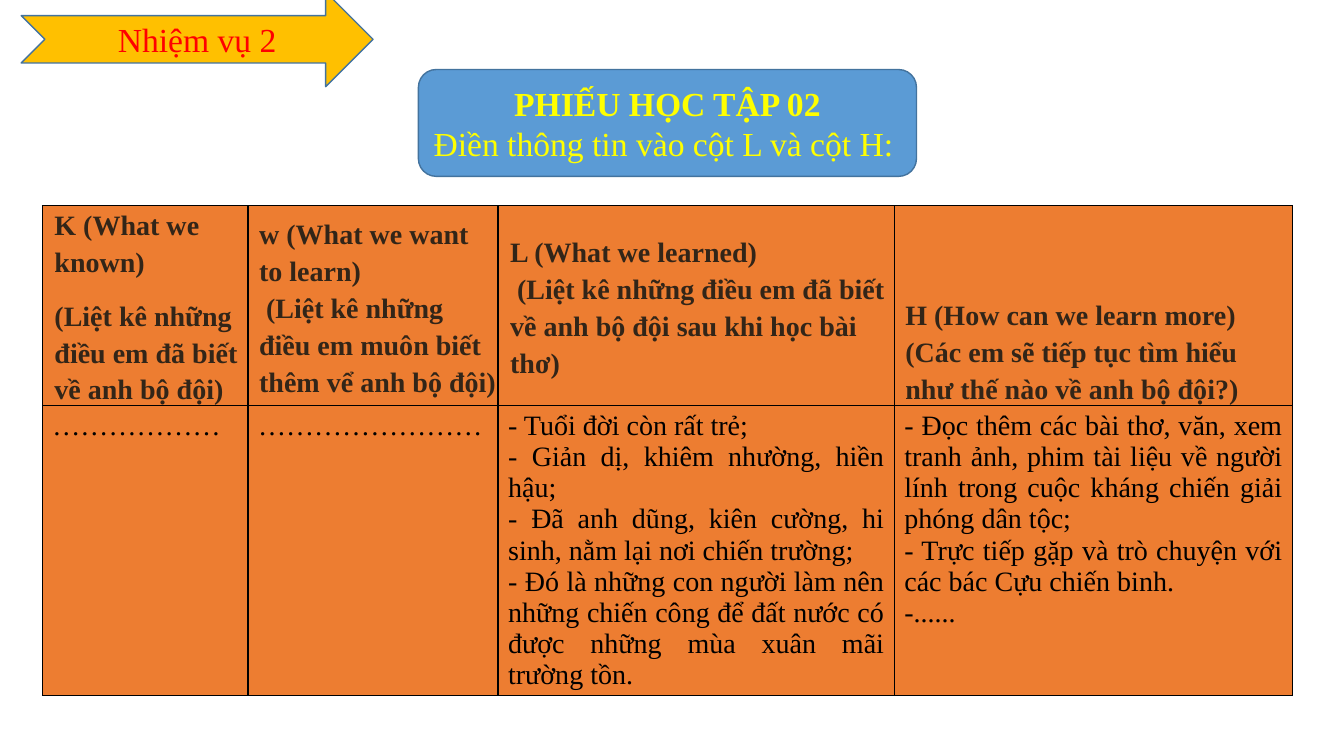
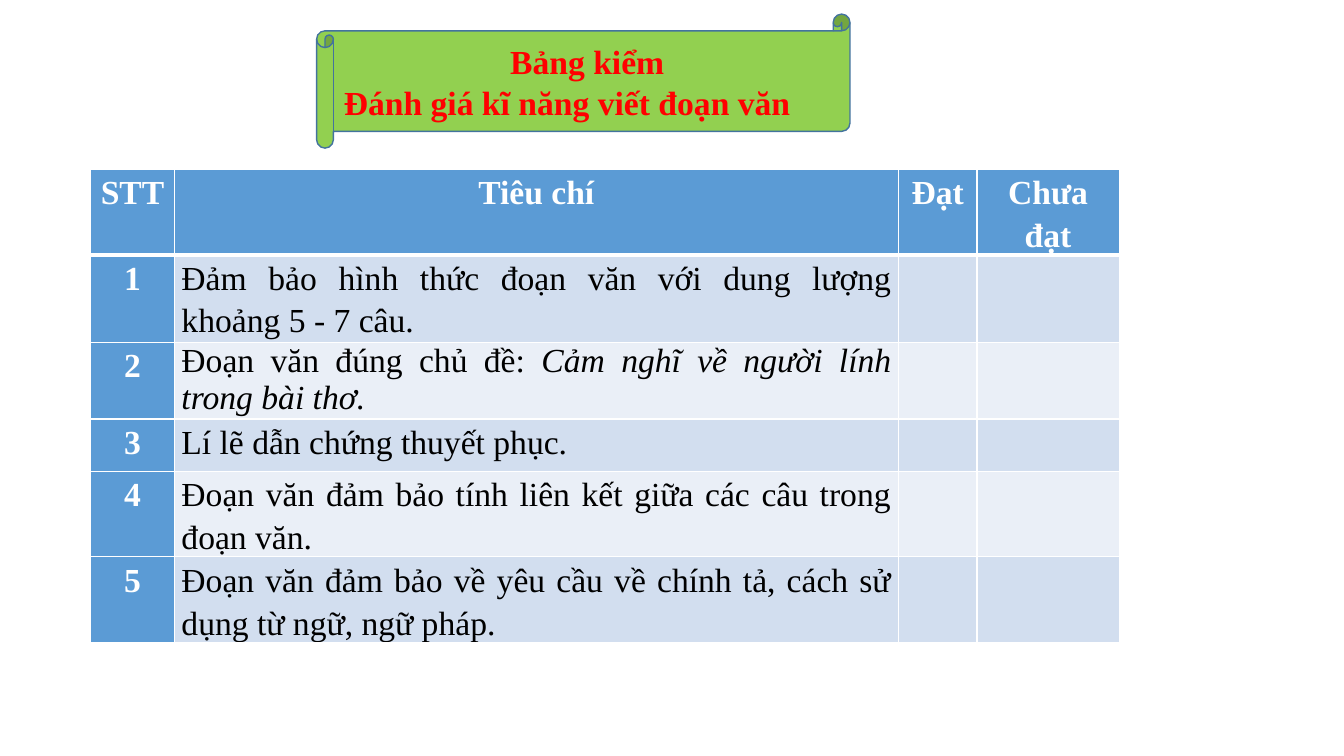
from dataclasses import dataclass, replace

from lxml.etree import SubElement
from pptx import Presentation
from pptx.dml.color import RGBColor
from pptx.enum.shapes import MSO_SHAPE
from pptx.enum.text import MSO_ANCHOR, MSO_AUTO_SIZE, PP_ALIGN
from pptx.oxml.ns import qn
from pptx.shapes.autoshape import Shape
from pptx.slide import Slide
from pptx.table import _Cell
from pptx.text.text import TextFrame
from pptx.util import Inches, Pt


@dataclass(frozen=True)
class Theme:
    font: str = "Times New Roman"
    large: int = 24
    body: int = 20
    black: str = "000000"
    white: str = "FFFFFF"
    red: str = "FF0000"
    yellow: str = "FFFF00"
    gold: str = "FFC000"
    green: str = "92D050"
    blue: str = "5B9BD5"
    edge: str = "43739E"
    orange: str = "ED7D31"
    brown: str = "322518"
    bands: tuple[str, str] = ("D2DEEF", "EAEFF7")


THEME = Theme()


@dataclass(frozen=True)
class Style:
    size: int
    color: str
    bold: bool = False
    align: PP_ALIGN = PP_ALIGN.LEFT
    line: float = 1.0
    before: int = 0
    after: int = 0


@dataclass(frozen=True)
class Para:
    text: str
    style: Style
    tail: str = ""  # closing words in italics


@dataclass(frozen=True)
class Box:
    left: float
    top: float
    width: float
    height: float


@dataclass(frozen=True)
class Cell:
    paras: tuple[Para, ...]
    fill: str
    inset: tuple[float, float, float, float] = (0.1, 0.05, 0.1, 0.05)
    anchor: MSO_ANCHOR = MSO_ANCHOR.TOP


@dataclass(frozen=True)
class Grid:
    left: float
    top: float
    cols: tuple[float, ...]
    rows: tuple[float, ...]
    cells: list[list[Cell]]
    border: str
    rule: int = 1  # width of the line below the head row


def write(frame: TextFrame, paras: tuple[Para, ...]) -> None:
    for index, para in enumerate(paras):
        line = frame.add_paragraph() if index else frame.paragraphs[0]
        style = para.style
        line.alignment = style.align
        line.line_spacing = style.line
        line.space_before = Pt(style.before)
        line.space_after = Pt(style.after)
        font = line.font
        font.name, font.size, font.bold = THEME.font, Pt(style.size), style.bold
        font.color.rgb = RGBColor.from_string(style.color)
        line.add_run().text = para.text
        if para.tail:
            run = line.add_run()
            run.text = para.tail
            run.font.italic = True


def draw(slide: Slide, kind: MSO_SHAPE, box: Box, fill: str) -> Shape:
    shape = slide.shapes.add_shape(
        kind, Inches(box.left), Inches(box.top), Inches(box.width), Inches(box.height)
    )
    shape.shadow.inherit = False
    shape.fill.solid()
    shape.fill.fore_color.rgb = RGBColor.from_string(fill)
    shape.line.color.rgb = RGBColor.from_string(THEME.edge)
    shape.line.width = Pt(1)
    return shape


def head(slide: Slide, kind: MSO_SHAPE, box: Box, fill: str, text: Box,
         paras: tuple[Para, ...]) -> None:
    """Draw a banner and set the slide title on top of it."""
    draw(slide, kind, box, fill)
    title = slide.shapes.title
    title.left, title.top = Inches(text.left), Inches(text.top)
    title.width, title.height = Inches(text.width), Inches(text.height)
    frame = title.text_frame
    frame.word_wrap = True
    frame.auto_size = MSO_AUTO_SIZE.NONE
    frame.vertical_anchor = MSO_ANCHOR.MIDDLE
    write(frame, paras)
    slide.shapes.element.append(title.element)


def frame_cell(cell: _Cell, color: str, top: int, bottom: int) -> None:
    """Put borders, given in points, around a filled cell."""
    props = cell._tc.get_or_add_tcPr()
    widths = {"a:lnL": 1, "a:lnR": 1, "a:lnT": top, "a:lnB": bottom}
    for index, (tag, width) in enumerate(widths.items()):
        line = SubElement(props, qn(tag), w=str(Pt(width)))
        SubElement(SubElement(line, qn("a:solidFill")), qn("a:srgbClr"), val=color)
        props.insert(index, line)


def draw_grid(slide: Slide, grid: Grid) -> None:
    table = slide.shapes.add_table(
        len(grid.rows), len(grid.cols), Inches(grid.left), Inches(grid.top),
        Inches(sum(grid.cols)), Inches(sum(grid.rows)),
    ).table
    table.first_row = table.horz_banding = False
    for col, width in zip(table.columns, grid.cols):
        col.width = Inches(width)
    for row, height in zip(table.rows, grid.rows):
        row.height = Inches(height)
    for r, row in enumerate(grid.cells):
        for c, item in enumerate(row):
            cell = table.cell(r, c)
            cell.fill.solid()
            cell.fill.fore_color.rgb = RGBColor.from_string(item.fill)
            (cell.margin_left, cell.margin_top,
             cell.margin_right, cell.margin_bottom) = map(Inches, item.inset)
            cell.vertical_anchor = item.anchor
            write(cell.text_frame, item.paras)
            frame_cell(cell, grid.border, grid.rule if r == 1 else 1,
                       grid.rule if r == 0 else 1)


def chart_cells() -> list[list[Cell]]:
    """Give the K-W-L-H columns: a head row and a row of answers."""
    bold = Style(THEME.body, THEME.brown, True, line=1.19)
    first = replace(bold, line=1.17, before=13)
    plain = Style(THEME.body, THEME.black)
    full = replace(plain, align=PP_ALIGN.JUSTIFY)
    heads = (
        (first, 0.12, MSO_ANCHOR.TOP, "K (What we known)",
         "(Liệt kê những điều em đã biết về anh bộ đội)"),
        (bold, 0.11, MSO_ANCHOR.MIDDLE, "w (What we want to learn)",
         " (Liệt kê những điều em muôn biết thêm vể anh bộ đội)"),
        (bold, 0.12, MSO_ANCHOR.MIDDLE, "L (What we learned)",
         " (Liệt kê những điều em đã biết về anh bộ đội sau khi học bài thơ)"),
        (bold, 0.11, MSO_ANCHOR.BOTTOM, "H (How can we learn more)",
         "(Các em sẽ tiếp tục tìm hiểu như thế nào về anh bộ đội?)"),
    )
    notes = (
        (plain, "………………"),
        (plain, "……………………"),
        (full, "- Tuổi đời còn rất trẻ;",
         "- Giản dị, khiêm nhường, hiền hậu;",
         "- Đã anh dũng, kiên cường, hi sinh, nằm lại nơi chiến trường;",
         "- Đó là những con người làm nên những chiến công để đất nước có được "
         "những mùa xuân mãi trường tồn."),
        (full, "- Đọc thêm các bài thơ, văn, xem tranh ảnh, phim tài liệu về người "
         "lính trong cuộc kháng chiến giải phóng dân tộc;",
         "- Trực tiếp gặp và trò chuyện với các bác Cựu chiến binh.",
         "-......"),
    )
    return [
        [Cell(tuple(Para(text, style) for text in texts), THEME.orange,
              (left, 0, 0.01, 0), anchor)
         for style, left, anchor, *texts in heads],
        [Cell(tuple(Para(text, style) for text in texts), THEME.orange)
         for style, *texts in notes],
    ]


def check_cells() -> list[list[Cell]]:
    """Give the checklist: a head row and numbered, banded rows."""
    inset = (0.07, 0, 0.07, 0)
    bold = Style(THEME.large, THEME.white, True, PP_ALIGN.CENTER, 1.15, after=12)
    full = replace(bold, color=THEME.black, bold=False, align=PP_ALIGN.JUSTIFY)
    tight = replace(full, line=1.0, after=6)
    goals = (
        Para("Đảm bảo hình thức đoạn văn với dung lượng khoảng 5 - 7 câu.", full),
        Para("Đoạn văn đúng chủ đề: ", tight, "Cảm nghĩ về người lính trong bài thơ."),
        Para("Lí lẽ dẫn chứng thuyết phục.", full),
        Para("Đoạn văn đảm bảo tính liên kết giữa các câu trong đoạn văn.", full),
        Para("Đoạn văn đảm bảo về yêu cầu về chính tả, cách sử dụng từ ngữ, "
             "ngữ pháp.", full),
    )

    def label(text: str) -> Cell:
        return Cell((Para(text, bold),), THEME.blue, inset)

    rows = [[label(text) for text in ("STT", "Tiêu chí", "Đạt", "Chưa đạt")]]
    for index, goal in enumerate(goals):
        band = THEME.bands[index % 2]
        blank = Cell((), band)
        rows.append([label(str(index + 1)), Cell((goal,), band, inset), blank, blank])
    return rows


def main() -> None:
    deck = Presentation()
    deck.slide_width, deck.slide_height = Inches(13.33), Inches(7.5)
    layout = deck.slide_layouts[5]

    task = deck.slides.add_slide(layout)
    arrow = draw(task, MSO_SHAPE.NOTCHED_RIGHT_ARROW,
                 Box(0.21, -0.08, 3.49, 0.94), THEME.gold)
    arrow.text_frame.vertical_anchor = MSO_ANCHOR.MIDDLE
    write(arrow.text_frame, (
        Para("Nhiệm vụ 2", Style(THEME.large, THEME.red, align=PP_ALIGN.CENTER)),))
    plain = Style(THEME.large, THEME.yellow)
    head(task, MSO_SHAPE.ROUNDED_RECTANGLE, Box(4.15, 0.69, 4.94, 1.06), THEME.blue,
         Box(4.2, 0.74, 4.84, 0.96), (
             Para("PHIẾU HỌC TẬP 02",
                  replace(plain, bold=True, align=PP_ALIGN.CENTER)),
             Para("Điền thông tin vào cột L và cột H:", plain)))
    draw_grid(task, Grid(0.42, 2.04, (2.04, 2.48, 3.93, 3.95), (1.98, 2.87),
                         chart_cells(), THEME.black))

    check = deck.slides.add_slide(layout)
    bold = Style(THEME.large, THEME.red, True)
    head(check, MSO_SHAPE.HORIZONTAL_SCROLL, Box(3.14, 0.14, 5.29, 1.33), THEME.green,
         Box(3.31, 0.31, 5.03, 1), (
             Para("Bảng kiểm", replace(bold, align=PP_ALIGN.CENTER)),
             Para("Đánh giá kĩ năng viết đoạn văn", bold)))
    draw_grid(check, Grid(0.9, 1.68, (0.83, 7.18, 0.78, 1.41),
                          (0.84, 0.87, 0.76, 0.52, 0.84, 0.84),
                          check_cells(), THEME.white, rule=3))

    deck.save("out.pptx")


if __name__ == "__main__":
    main()
